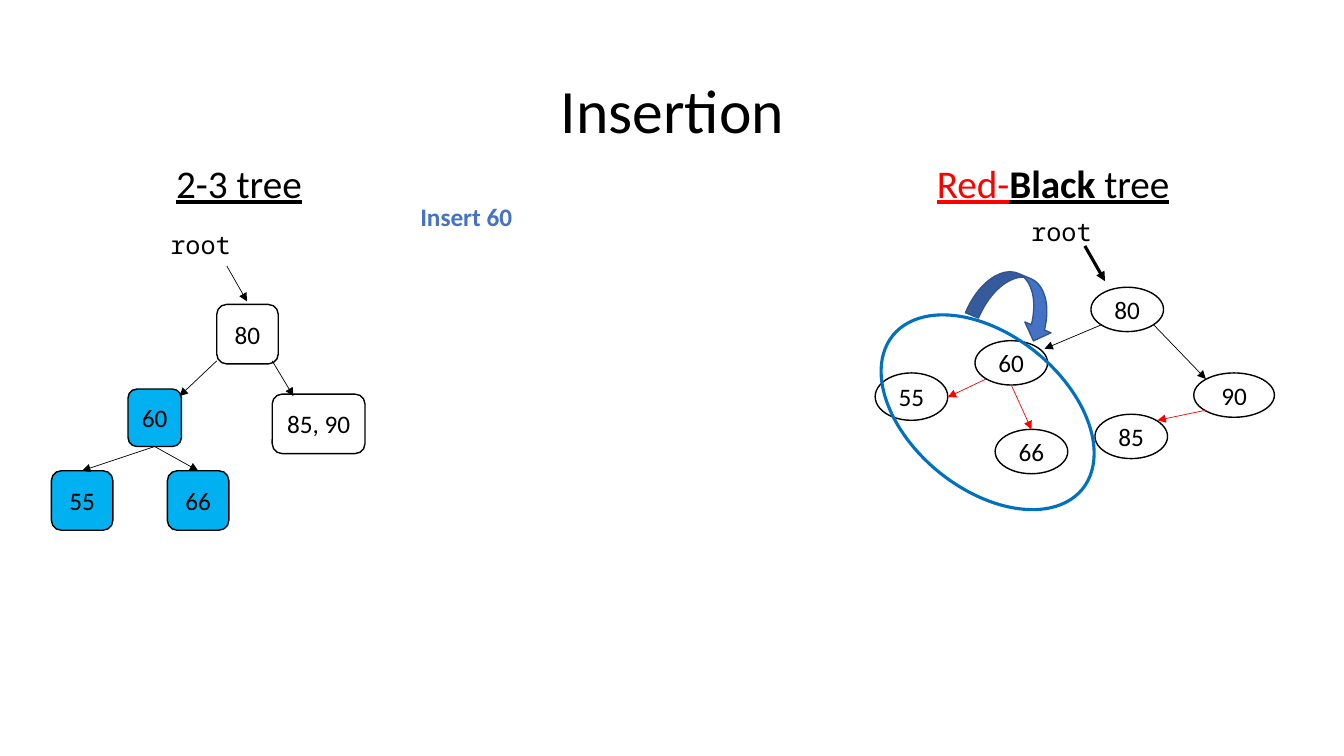
from dataclasses import dataclass

from lxml import etree
from pptx import Presentation
from pptx.dml.color import RGBColor
from pptx.enum.shapes import MSO_CONNECTOR, MSO_SHAPE
from pptx.enum.text import MSO_ANCHOR, PP_ALIGN
from pptx.oxml.ns import qn
from pptx.util import Inches, Pt

STRAIGHT = MSO_CONNECTOR.STRAIGHT
ELLIPSE, ROUNDED = MSO_SHAPE.OVAL, MSO_SHAPE.ROUNDED_RECTANGLE
CURVED_ARROW = MSO_SHAPE.CURVED_DOWN_ARROW
CENTER, LEFT = PP_ALIGN.CENTER, PP_ALIGN.LEFT
MIDDLE = MSO_ANCHOR.MIDDLE
TOP_SIDE, BOTTOM_SIDE = 0, 2


@dataclass(frozen=True)
class Theme:
    """Colours, fonts and type sizes of the slide."""
    black: str = "000000"
    red: str = "FF0000"
    accent: str = "4472C4"
    accent_dark: str = "325491"
    changed: str = "00B0F0"
    loop: str = "0070C0"
    body_font: str = "Calibri"
    code_font: str = "Noto Sans Mono"
    title_size: int = 44
    heading_size: int = 28
    body_size: int = 18
    thin: float = 0.5
    outline: float = 1
    thick: float = 2.25


THEME = Theme()


def color(value):
    """Turn a hex string into a colour."""
    return RGBColor.from_string(value)


def place(box, left, top, width, height):
    """Return slide lengths for a rectangle given inside a box."""
    return [Inches(value) for value in (box[0] + left, box[1] + top, width, height)]


def add_run(paragraph, text, size=THEME.body_size, ink=THEME.black,
            font=THEME.body_font, bold=False, underline=False):
    """Append one formatted run."""
    run = paragraph.add_run()
    run.text = text
    run.font.size = Pt(size)
    run.font.name = font
    run.font.color.rgb = color(ink)
    run.font.bold = bold
    run.font.underline = underline


def add_label(slide, box, area, runs, align=LEFT):
    """Add a text box made of (text, format) runs."""
    frame = slide.shapes.add_textbox(*place(box, *area)).text_frame
    frame.word_wrap = True
    paragraph = frame.paragraphs[0]
    paragraph.alignment = align
    for text, style in runs:
        add_run(paragraph, text, **style)


def add_heading(slide, box, area, parts):
    """Add the underlined heading of a tree."""
    runs = [(text, dict(size=THEME.heading_size, underline=True, **style))
            for text, style in parts]
    add_label(slide, box, area, runs, CENTER)


def add_outline(slide, box, kind, area, line=THEME.black, weight=THEME.outline,
                fill=None, rotation=0):
    """Add an outlined shape, filled only when a colour is given."""
    shape = slide.shapes.add_shape(kind, *place(box, *area))
    shape.shadow.inherit = False
    shape.rotation = rotation
    shape.line.color.rgb = color(line)
    shape.line.width = Pt(weight)
    if fill:
        shape.fill.solid()
        shape.fill.fore_color.rgb = color(fill)
    else:
        shape.fill.background()
    return shape


def add_node(slide, box, kind, text, area, fill=None):
    """Add a tree node with its keys."""
    node = add_outline(slide, box, kind, area, fill=fill)
    frame = node.text_frame
    frame.margin_left = frame.margin_right = 0
    frame.vertical_anchor = MIDDLE
    frame.paragraphs[0].alignment = CENTER
    add_run(frame.paragraphs[0], text)
    return node


def add_arrow(slide, box, start, end, ink=THEME.black, weight=THEME.thin):
    """Add a straight arrow between two points of a box."""
    points = [Inches(origin + offset)
              for point in (start, end) for origin, offset in zip(box, point)]
    arrow = slide.shapes.add_connector(STRAIGHT, *points)
    arrow.line.color.rgb = color(ink)
    arrow.line.width = Pt(weight)
    etree.SubElement(arrow.line._get_or_add_ln(), qn("a:tailEnd"), type="triangle")
    etree.SubElement(arrow._element.spPr, qn("a:effectLst"))
    return arrow


def add_title(slide, box):
    """Place and format the slide title."""
    title = slide.shapes.title
    title.left, title.top, title.width, title.height = place(box, 0, 0, 11.5, 1.45)
    title.text_frame.vertical_anchor = MIDDLE
    paragraph = title.text_frame.paragraphs[0]
    paragraph.alignment = CENTER
    paragraph.line_spacing = 0.9
    add_run(paragraph, "Insertion", THEME.title_size)


def add_two_three_tree(slide, box):
    """Draw the 2-3 tree with its changed nodes."""
    add_heading(slide, box, (0.79, 0.03, 2.16, 0.57), [("2-3 tree", {})])
    add_label(slide, box, (1.09, 0.73, 1.31, 0.4),
              [("root", {"font": THEME.code_font})])
    nodes = {text: add_node(slide, box, ROUNDED, text, area, fill)
             for text, area, fill in (
                 ("80", (1.65, 1.52, 0.61, 0.59), None),
                 ("85, 90", (2.2, 2.41, 0.92, 0.59), None),
                 ("60", (0.77, 2.36, 0.53, 0.57), THEME.changed),
                 ("55", (0.01, 3.17, 0.61, 0.59), THEME.changed),
                 ("66", (1.16, 3.17, 0.61, 0.59), THEME.changed))}
    add_arrow(slide, box, (1.75, 1.14), (1.95, 1.49))
    add_arrow(slide, box, (2.2, 2.08), (2.41, 2.43))
    add_arrow(slide, box, (1.65, 2.08), (1.28, 2.43))
    for child in ("55", "66"):
        arrow = add_arrow(slide, box, (1.03, 2.93), (1.03, 3.17))
        arrow.begin_connect(nodes["60"], BOTTOM_SIDE)
        arrow.end_connect(nodes[child], TOP_SIDE)


def add_red_black_tree(slide, box):
    """Draw the red-black tree with the rotated part circled."""
    add_heading(slide, box, (0.6, 0.03, 2.69, 0.57),
                [("Red-", {"ink": THEME.red}), ("Black", {"bold": True}),
                 (" tree", {})])
    add_label(slide, box, (1.63, 0.6, 0.93, 0.4),
              [("root", {"font": THEME.code_font})])
    add_arrow(slide, box, (2.26, 0.94), (2.46, 1.29), weight=THEME.thick)
    for text, left, top, width, height in (
            ("80", 2.32, 1.35, 0.72, 0.44), ("90", 3.34, 2.2, 0.8, 0.44),
            ("85", 2.36, 2.61, 0.72, 0.44), ("60", 1.17, 1.88, 0.72, 0.44),
            ("55", 0.18, 2.2, 0.72, 0.47), ("66", 1.37, 2.76, 0.72, 0.44)):
        add_node(slide, box, ELLIPSE, text, (left, top, width, height))
    for start, end, ink in (
            ((2.43, 1.72), (1.86, 1.96), THEME.black),
            ((2.94, 1.72), (3.46, 2.26), THEME.black),
            ((3.46, 2.57), (2.98, 2.67), THEME.red),
            ((1.53, 2.32), (1.73, 2.76), THEME.red),
            ((1.28, 2.26), (0.9, 2.44), THEME.red)):
        add_arrow(slide, box, start, end, ink)
    add_outline(slide, box, ELLIPSE, (0.53, 1.38, 1.53, 2.42),
                THEME.loop, THEME.thick, rotation=129)
    add_outline(slide, box, CURVED_ARROW, (1.15, 1.23, 0.87, 0.56),
                THEME.accent_dark, fill=THEME.accent, rotation=22.5)


def main():
    """Build and save the slide."""
    presentation = Presentation()
    presentation.slide_width = Inches(13.33)
    presentation.slide_height = Inches(7.5)
    slide = presentation.slides.add_slide(presentation.slide_layouts[5])
    add_title(slide, (0.92, 0.4))
    add_two_three_tree(slide, (0.5, 1.5))
    add_label(slide, (4.07, 1.95), (0, 0, 3.38, 0.4),
              [("Insert 60", {"ink": THEME.accent, "bold": True})])
    add_red_black_tree(slide, (8.5, 1.5))
    presentation.save("out.pptx")


if __name__ == "__main__":
    main()
